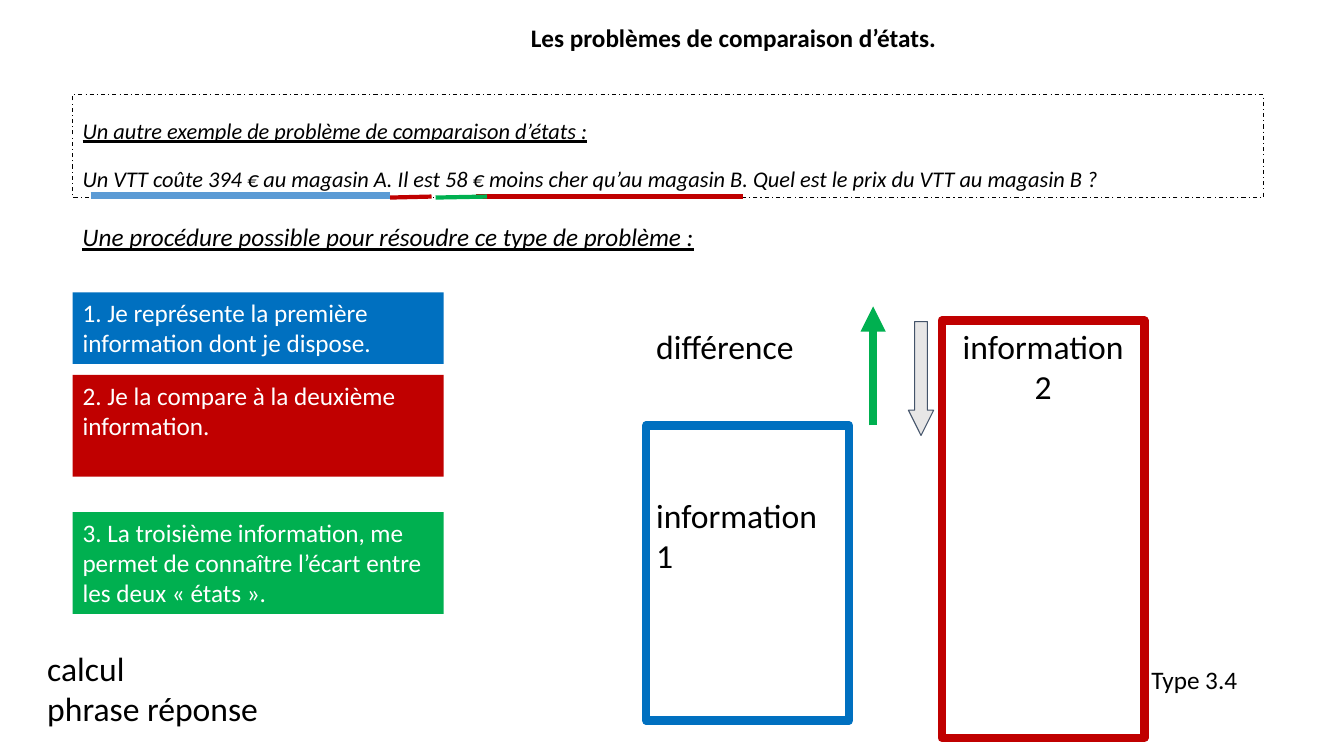
import lxml.etree
import pptx
import pptx.util
import pptx.dml.color
import pptx.enum.dml
import pptx.enum.shapes
import pptx.enum.text
import pptx.oxml.ns

Inches, Pt = pptx.util.Inches, pptx.util.Pt
SHAPE = pptx.enum.shapes.MSO_SHAPE
ANCHOR = pptx.enum.text.MSO_ANCHOR
ALIGN = pptx.enum.text.PP_ALIGN
qn = pptx.oxml.ns.qn
COLORS = {
    "black": "000000", "white": "FFFFFF", "blue": "0070C0", "red": "C00000",
    "green": "00B050", "sky": "5B9BD5", "gray": "E7E6E6", "slate": "44546A",
}


def rgb(name):
    return pptx.dml.color.RGBColor.from_string(COLORS[name])


def write(sp, lines, size, color="black", align=ALIGN.LEFT, anchor=ANCHOR.TOP,
          bold=False, italic=False, underline=False):
    """Put one paragraph per line in a shape; return its text frame."""
    tf = sp.text_frame
    tf.word_wrap = True
    tf.vertical_anchor = anchor
    for i, line in enumerate(lines):
        p = tf.add_paragraph() if i else tf.paragraphs[0]
        p.alignment = align
        r = p.add_run()
        r.text = line
        r.font.name = "Calibri"
        r.font.size = Pt(size)
        r.font.bold, r.font.italic, r.font.underline = bold, italic, underline
        r.font.color.rgb = rgb(color)
    return tf


def add_label(s, box, lines, size, **style):
    sp = s.shapes.add_textbox(*map(Inches, box))
    return write(sp, lines, size, **style)


def add_block(s, box, fill=None, line=None, width=0.75, kind=SHAPE.RECTANGLE):
    sp = s.shapes.add_shape(kind, *map(Inches, box))
    sp.shadow.inherit = False
    if fill:
        sp.fill.solid()
        sp.fill.fore_color.rgb = rgb(fill)
    else:
        sp.fill.background()
    if line:
        sp.line.color.rgb = rgb(line)
        sp.line.width = Pt(width)
    else:
        sp.line.fill.background()
    return sp


def add_line(s, x1, y1, x2, y2, color, width, arrow=False):
    sp = s.shapes.add_connector(pptx.enum.shapes.MSO_CONNECTOR.STRAIGHT,
                                *map(Inches, (x1, y1, x2, y2)))
    sp.line.color.rgb = rgb(color)
    sp.line.width = Pt(width)
    spPr = sp.element.spPr
    if arrow:
        lxml.etree.SubElement(spPr.find(qn("a:ln")), qn("a:tailEnd"), type="triangle")
    lxml.etree.SubElement(spPr, qn("a:effectLst"))


def add_problem(s, x, y, w, h):
    """Dashed frame with the worked example and its coloured underlines."""
    sp = add_block(s, (x, y, w, h), line="black")
    sp.line.dash_style = pptx.enum.dml.MSO_LINE.DASH_DOT
    tf = write(sp, [
        "Un autre exemple de problème de comparaison d’états :",
        "Un VTT coûte 394 € au magasin A. Il est 58 € moins cher qu’au magasin B. "
        "Quel est le prix du VTT au magasin B ?",
    ], 16, anchor=ANCHOR.BOTTOM, italic=True, underline=True)
    heading, question = tf.paragraphs
    heading.line_spacing = question.line_spacing = 0.9
    question.space_before = Pt(17.5)
    question.runs[0].font.underline = False
    base = y + h
    for start, end, rise1, rise2, color, width in [
        (0.18, 3.15, 0.02, 0.02, "sky", 5),
        (3.15, 3.56, 0, 0.01, "red", 3),
        (4.0, 6.65, 0.01, 0.01, "red", 3),
        (3.6, 4.11, 0, 0.01, "green", 3),
    ]:
        add_line(s, x + start, base - rise1, x + end, base - rise2, color, width)


def add_steps(s, x, y, w):
    for dy, h, color, text in [
        (0, 0.71, "blue", "1. Je représente la première information dont je dispose."),
        (0.82, 1.01, "red", "2. Je la compare à la deuxième information."),
        (2.18, 1.01, "green", "3. La troisième information, me permet de connaître "
                              "l’écart entre les deux « états »."),
    ]:
        sp = add_block(s, (x, y + dy, w, h), fill=color)
        write(sp, [text], 18, "white")


def add_diagram(s, x, y):
    """Two bars of unequal height, with arrows for the difference."""
    bar_w, gap_top = 2.01, 1.04
    first = add_block(s, (x, y + gap_top, bar_w, 2.93), line="blue", width=6)
    write(first, ["information 1"], 24).margin_top = Inches(0.69)
    second = add_block(s, (x + 2.93, y, bar_w, 4.14), line="red", width=6)
    write(second, ["information 2"], 24, align=ALIGN.CENTER)
    add_label(s, (x, y, 1.72, 0.5), ["différence"], 24)
    add_line(s, x + 2.25, y + gap_top, x + 2.25, y - 0.14, "green", 6, arrow=True)
    down = add_block(s, (x + 2.6, y + 0.01, 0.25, 1.13), "gray", "slate",
                     kind=SHAPE.DOWN_ARROW)
    down.adjustments[0], down.adjustments[1] = 0.5, 1


def build_slide(prs):
    s = prs.slides.add_slide(prs.slide_layouts[6])
    left = 0.72
    add_problem(s, left, 0.94, 11.81, 1.02)
    add_steps(s, left, 2.9, 3.68)
    add_diagram(s, 6.41, 3.18)
    add_label(s, (4.58, 0.17, 5.39, 0.4), ["Les problèmes de comparaison d’états."],
              18, align=ALIGN.CENTER, bold=True)
    add_label(s, (left, 2.15, 6.66, 0.4),
              ["Une procédure possible pour résoudre ce type de problème :"],
              18, italic=True, underline=True)
    add_label(s, (0.37, 6.38, 5.75, 0.91), ["calcul", "phrase réponse"], 24)
    add_label(s, (11.32, 6.54, 1.21, 0.4), ["Type 3.4"], 18)


def main():
    prs = pptx.Presentation()
    prs.slide_width, prs.slide_height = Inches(13.33), Inches(7.5)
    build_slide(prs)
    prs.save("out.pptx")


if __name__ == "__main__":
    main()
